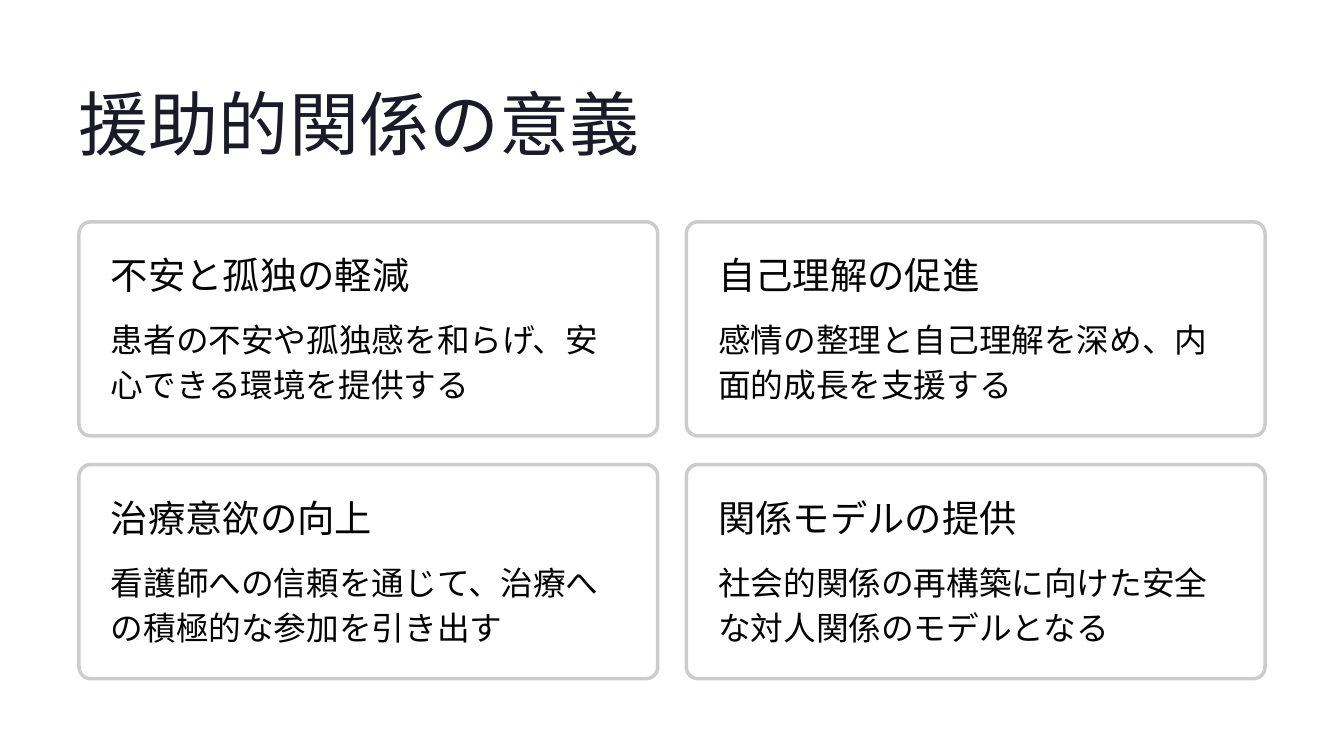
import pptx
import pptx.dml.color
import pptx.enum.shapes
import pptx.oxml
import pptx.oxml.ns
import pptx.util
from pptx.util import Inches

COLORS = {"paper": "FFFFFF", "title": "1B1B27", "text": "030303", "border": "CCCCCC"}

FORMATS = {
    "title": {"font": "Inter", "size": 60, "spacing": 75, "color": "title", "wrap": False},
    "heading": {"font": "Inter", "size": 32, "spacing": 37.5, "color": "text", "wrap": False},
    "body": {"font": "Roboto", "size": 28, "spacing": 38.5, "color": "text", "wrap": True},
}

TITLE = "援助的関係の意義"
BENEFITS = [
    ("不安と孤独の軽減", "患者の不安や孤独感を和らげ、安心できる環境を提供する"),
    ("自己理解の促進", "感情の整理と自己理解を深め、内面的成長を支援する"),
    ("治療意欲の向上", "看護師への信頼を通じて、治療への積極的な参加を引き出す"),
    ("関係モデルの提供", "社会的関係の再構築に向けた安全な対人関係のモデルとなる"),
]

COLUMNS = 2
GAP = 0.34
PADDING = 0.38


def rgb(name):
    return pptx.dml.color.RGBColor.from_string(COLORS[name])


def add_text(slide, box, wording, style):
    look = FORMATS[style]
    frame = slide.shapes.add_textbox(*map(Inches, box)).text_frame
    margins = dict.fromkeys(("margin_left", "margin_top", "margin_right", "margin_bottom"), 0)
    for attribute, value in {**margins, "word_wrap": look["wrap"]}.items():
        setattr(frame, attribute, value)
    paragraph = frame.paragraphs[0]
    paragraph.line_spacing = pptx.util.Pt(look["spacing"])
    run = paragraph.add_run()
    run.text = wording
    font_values = {"name": look["font"], "size": pptx.util.Pt(look["size"])}
    for attribute, value in font_values.items():
        setattr(run.font, attribute, value)
    run.font.color.rgb = rgb(look["color"])


def add_card(slide, box, heading, body):
    left, top, width, height = box

    # Rounded frame with a slightly transparent fill
    card = slide.shapes.add_shape(
        pptx.enum.shapes.MSO_SHAPE.ROUNDED_RECTANGLE, *map(Inches, box))
    card.adjustments[0] = 0.055
    card.shadow.inherit = False
    card.fill.solid()
    card.fill.fore_color.rgb = rgb("paper")
    fill_color = card.fill._xPr.find(".//" + pptx.oxml.ns.qn("a:srgbClr"))
    fill_color.append(pptx.oxml.parse_xml(
        f'<a:alpha {pptx.oxml.ns.nsdecls("a")} val="95000"/>'))
    card.line.color.rgb = rgb("border")
    card.line.width = pptx.util.Pt(3)

    # Heading and body
    inner_left = left + PADDING
    add_text(slide, (inner_left, top + PADDING, 4.19, 0.52), heading, "heading")
    add_text(slide, (inner_left, top + 1.1, width - 2 * PADDING, 1.07), body, "body")


def add_card_grid(slide, box, benefits):
    left, top, width, height = box
    rows = len(benefits) // COLUMNS
    card_width = (width - GAP * (COLUMNS - 1)) / COLUMNS
    card_height = (height - GAP * (rows - 1)) / rows
    for index, (heading, body) in enumerate(benefits):
        row, column = divmod(index, COLUMNS)
        card_box = (left + column * (card_width + GAP), top + row * (card_height + GAP),
                    card_width, card_height)
        add_card(slide, card_box, heading, body)


def main():
    deck = pptx.Presentation()
    deck.slide_width, deck.slide_height = Inches(16), Inches(9)
    slide = deck.slides.add_slide(deck.slide_layouts[6])
    slide.background.fill.solid()
    slide.background.fill.fore_color.rgb = rgb("paper")

    add_text(slide, (0.94, 0.92, 8.38, 1.05), TITLE, "title")
    add_card_grid(slide, (0.94, 2.64, 14.12, 5.44), BENEFITS)
    deck.save("out.pptx")


if __name__ == "__main__":
    main()
